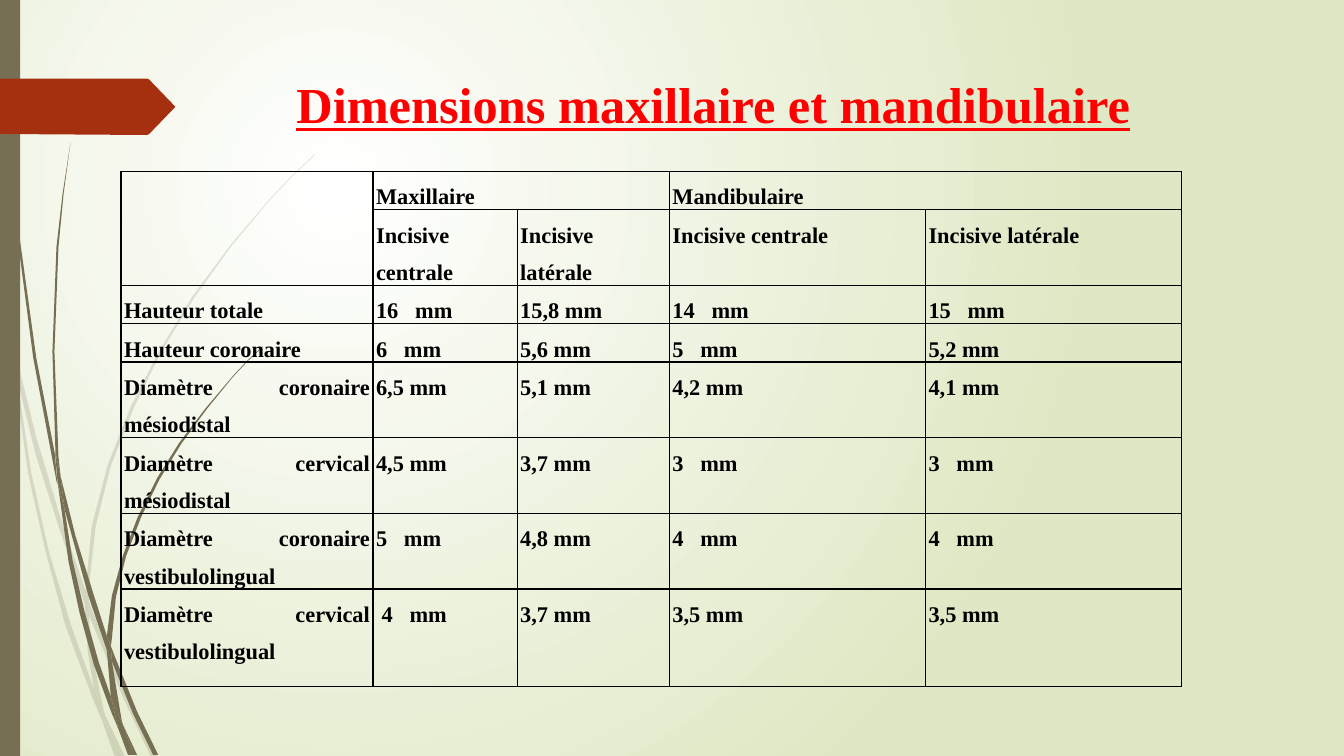
from pptx import Presentation
from pptx.dml.color import RGBColor as Rgb
from pptx.enum.text import MSO_ANCHOR as Anchor, PP_ALIGN as Align
from pptx.enum.shapes import MSO_SHAPE as Preset
from pptx.oxml import parse_xml
from pptx.oxml.ns import nsdecls
from pptx.util import Inches, Pt

COLORS = {
    "paper": "FFFFFF",
    "sage": "DFE8C4",
    "olive": "766F54",
    "rust": "A53010",
    "title": "FF0000",
    "ink": "000000",
}

PALE_BLADES = [
    [(0.11, 3.5), (0.09, 3.22), (0, 2.82), (0, 2.99), (0.1, 3.44)],
    [(0.58, 5.22), (0.84, 5.99), (0.85, 5.86), (0.62, 5.2), (0.36, 4.34), (0.14, 3.45), (0.17, 3.76), (0.35, 4.5)],
    [(0.92, 6.07), (0.88, 5.96), (0.88, 6.1), (1.23, 6.94), (1.5, 7.51), (1.55, 7.51), (1.27, 6.92)],
    [(1.19, 7.51), (1.24, 7.51), (1.05, 7.11)],
    [(0.93, 6.83), (0.7, 6.19), (0.48, 5.45), (0.31, 4.69), (0.17, 3.76), (0.11, 3.5), (0.28, 4.7),
     (0.45, 5.46), (0.65, 6.21), (0.92, 6.93), (1.01, 7.14), (0.99, 7.07)],
    [(0.84, 5.99), (0.87, 6.46), (0.93, 6.83), (0.96, 6.92), (1.05, 7.11), (1.03, 7.06), (0.91, 6.46),
     (0.88, 6.1), (0.88, 6.08)],
    [(0.88, 5.84), (0.95, 5.22), (1.1, 4.62), (1.33, 4.04), (1.6, 3.49), (1.93, 2.95), (2.29, 2.45),
     (2.68, 1.98), (2.9, 1.75), (3.12, 1.54), (3.12, 1.53), (2.89, 1.75), (2.68, 1.97), (2.28, 2.44),
     (1.91, 2.94), (1.58, 3.48), (1.3, 4.03), (1.07, 4.61), (0.91, 5.22), (0.85, 5.84), (0.85, 5.86), (0.88, 5.96)],
    [(1.01, 7.14), (1.14, 7.51), (1.19, 7.51)],
    [(0.88, 6.08), (0.88, 6.1), (0.88, 5.96), (0.85, 5.86), (0.84, 5.99)],
    [(0.96, 6.92), (0.93, 6.83), (0.99, 7.07), (1.01, 7.14), (1.19, 7.51), (1.05, 7.11)],
]

DARK_BLADES = [
    [(0.07, 1.1), (0.17, 2.33), (0.33, 3.55), (0.56, 4.77), (0.57, 4.81), (0.55, 4.57), (0.55, 4.53),
     (0.36, 3.55), (0.19, 2.32), (0.08, 1.09), (0.05, 0.48), (0.04, 0), (0.03, 0), (0.04, 0.48)],
    [(0.88, 5.92), (1.06, 6.45), (1.06, 6.33), (1.06, 6.31), (0.93, 5.9), (0.75, 5.32), (0.6, 4.72), (0.64, 5.05)],
    [(1.13, 6.49), (1.1, 6.41), (1.11, 6.56), (1.32, 7.08), (1.52, 7.49), (1.57, 7.49), (1.36, 7.06)],
    [(1.1, 6.91), (0.98, 6.57), (0.84, 6.07), (0.72, 5.56), (0.64, 5.05), (0.57, 4.77), (0.68, 5.57),
     (0.79, 6.08), (0.93, 6.59), (1.11, 7.08), (1.17, 7.22), (1.16, 7.17)],
    [(0.6, 4.72), (0.58, 4.53), (0.54, 3.49), (0.58, 2.45), (0.63, 1.93), (0.7, 1.41), (0.62, 1.93),
     (0.56, 2.45), (0.52, 3.49), (0.55, 4.49)],
    [(1.33, 7.49), (1.36, 7.49), (1.22, 7.19)],
    [(0.57, 4.77), (0.64, 5.05), (0.6, 4.72), (0.55, 4.49), (0.55, 4.53)],
    [(1.11, 6.33), (1.15, 5.92), (1.25, 5.52), (1.4, 5.13), (1.58, 4.76), (1.8, 4.4), (2.05, 4.06),
     (2.31, 3.74), (2.45, 3.59), (2.61, 3.44), (2.6, 3.44), (2.45, 3.58), (2.31, 3.73), (2.04, 4.05),
     (1.78, 4.39), (1.56, 4.74), (1.37, 5.12), (1.22, 5.51), (1.11, 5.91), (1.06, 6.31), (1.1, 6.41)],
    [(1.17, 7.22), (1.27, 7.49), (1.31, 7.49)],
    [(1.06, 6.45), (1.1, 6.91), (1.16, 7.06), (1.22, 7.19), (1.21, 7.16), (1.11, 6.56), (1.09, 6.51)],
    [(1.06, 6.45), (1.09, 6.51), (1.11, 6.56), (1.1, 6.41), (1.06, 6.31), (1.06, 6.33)],
    [(1.16, 7.06), (1.1, 6.91), (1.16, 7.17), (1.17, 7.22), (1.3, 7.49), (1.33, 7.49), (1.22, 7.19)],
]

ARROW = [(1.74, 1.06), (1.48, 1.33), (1.46, 1.34), (0, 1.33), (0, 0.78), (1.46, 0.78), (1.48, 0.79)]

COLUMNS = [2.5, 1.43, 1.51, 2.54, 2.54]
ROWS = [0.38, 0.75, 0.38, 0.38, 0.75, 0.75, 0.75, 0.97]
TEETH = ["Incisive centrale", "Incisive latérale"]
DIMENSIONS = [
    ["", "Maxillaire", "", "Mandibulaire", ""],
    ["", *TEETH, *TEETH],
    ["Hauteur totale", "16   mm", "15,8 mm", "14   mm", "15   mm"],
    ["Hauteur coronaire", "6   mm", "5,6 mm", "5   mm", "5,2 mm"],
    ["Diamètre coronaire mésiodistal", "6,5 mm", "5,1 mm", "4,2 mm", "4,1 mm"],
    ["Diamètre cervical mésiodistal", "4,5 mm", "3,7 mm", "3   mm", "3   mm"],
    ["Diamètre coronaire vestibulolingual", "5   mm", "4,8 mm", "4   mm", "4   mm"],
    ["Diamètre cervical vestibulolingual", " 4   mm", "3,7 mm", "3,5 mm", "3,5 mm"],
]
MERGES = [((0, 0), (1, 0)), ((0, 1), (0, 2)), ((0, 3), (0, 4))]


def write(frame, text, size, color, align=Align.LEFT, spacing=1.0, after=0, underline=False):
    paragraph = frame.paragraphs[0]
    paragraph.alignment = align
    paragraph.line_spacing = spacing
    paragraph.space_after = Pt(after)
    run = paragraph.add_run()
    run.text = text
    run.font.name = "Times New Roman"
    run.font.size = Pt(size)
    run.font.bold = True
    run.font.underline = underline
    run.font.color.rgb = Rgb.from_string(COLORS[color])


class ToothSlide:
    def __init__(self, deck):
        self.slide = deck.slides.add_slide(deck.slide_layouts[5])

    def background(self, center, edge):
        fill = self.slide.background.fill
        fill.gradient()
        for stop, color in zip(fill.gradient_stops, (center, edge)):
            stop.color.rgb = Rgb.from_string(COLORS[color])
        gradient = self.slide.element.xpath(".//p:bg//a:gradFill")[0]
        for linear in gradient.xpath("a:lin"):
            gradient.remove(linear)
        gradient.append(parse_xml(
            f'<a:path {nsdecls("a")} path="circle">'
            '<a:fillToRect l="50000" t="50000" r="100000" b="100000"/></a:path>'))

    def paint(self, shape, color, opacity=100):
        shape.shadow.inherit = False
        shape.line.fill.background()
        shape.fill.solid()
        shape.fill.fore_color.rgb = Rgb.from_string(COLORS[color])
        if opacity < 100:
            tint = shape.element.xpath("p:spPr/a:solidFill/a:srgbClr")[0]
            tint.append(parse_xml(f'<a:alpha {nsdecls("a")} val="{opacity * 1000}"/>'))

    def outline(self, points, color, opacity=100, shapes=None):
        corners = [(Inches(x), Inches(y)) for x, y in points]
        builder = (shapes or self.slide.shapes).build_freeform(*corners[0])
        builder.add_line_segments(corners[1:], close=True)
        self.paint(builder.convert_to_shape(), color, opacity)

    def grass(self, blades, opacity=100):
        tuft = self.slide.shapes.add_group_shape()
        for blade in blades:
            self.outline(blade, "olive", opacity, tuft.shapes)

    def bar(self, left, top, width, height, color):
        box = map(Inches, (left, top, width, height))
        self.paint(self.slide.shapes.add_shape(Preset.RECTANGLE, *box), color)

    def title(self, text, left, top, width, height):
        heading = self.slide.shapes.title
        heading.left, heading.top = Inches(left), Inches(top)
        heading.width, heading.height = Inches(width), Inches(height)
        heading.text_frame.vertical_anchor = Anchor.TOP
        write(heading.text_frame, text, size=36, color="title", underline=True)

    def cell(self, cell, text):
        cell.margin_left = cell.margin_right = Inches(0.03)
        cell.margin_top, cell.margin_bottom = Inches(0.01), 0
        properties = cell._tc.get_or_add_tcPr()
        for side in "LRTB":
            properties.append(parse_xml(
                f'<a:ln{side} {nsdecls("a")} w="12700"><a:solidFill>'
                f'<a:srgbClr val="{COLORS["ink"]}"/></a:solidFill></a:ln{side}>'))
        cell.fill.background()
        if text:
            write(cell.text_frame, text, size=16, color="ink", align=Align.JUSTIFY, spacing=1.5, after=10)

    def table(self, values, left, top):
        size = map(Inches, (left, top, sum(COLUMNS), sum(ROWS)))
        grid = self.slide.shapes.add_table(len(ROWS), len(COLUMNS), *size).table
        grid.first_row = grid.horz_banding = False
        for column, width in zip(grid.columns, COLUMNS):
            column.width = Inches(width)
        for row, height in zip(grid.rows, ROWS):
            row.height = Inches(height)
        for r, row in enumerate(values):
            for c, text in enumerate(row):
                self.cell(grid.cell(r, c), text)
        for first, last in MERGES:
            grid.cell(*first).merge(grid.cell(*last))


def main():
    deck = Presentation()
    deck.slide_width, deck.slide_height = Inches(13.33), Inches(7.5)
    page = ToothSlide(deck)
    page.background("paper", "sage")
    page.grass(PALE_BLADES, opacity=20)
    page.grass(DARK_BLADES)
    page.bar(0, 0, 0.2, 7.5, "olive")
    page.outline(ARROW, "rust")
    page.title("Dimensions maxillaire et mandibulaire", 2.84, 0.68, 9.75, 1.4)
    page.table(DIMENSIONS, 1.2, 1.7)
    deck.save("out.pptx")


if __name__ == "__main__":
    main()
